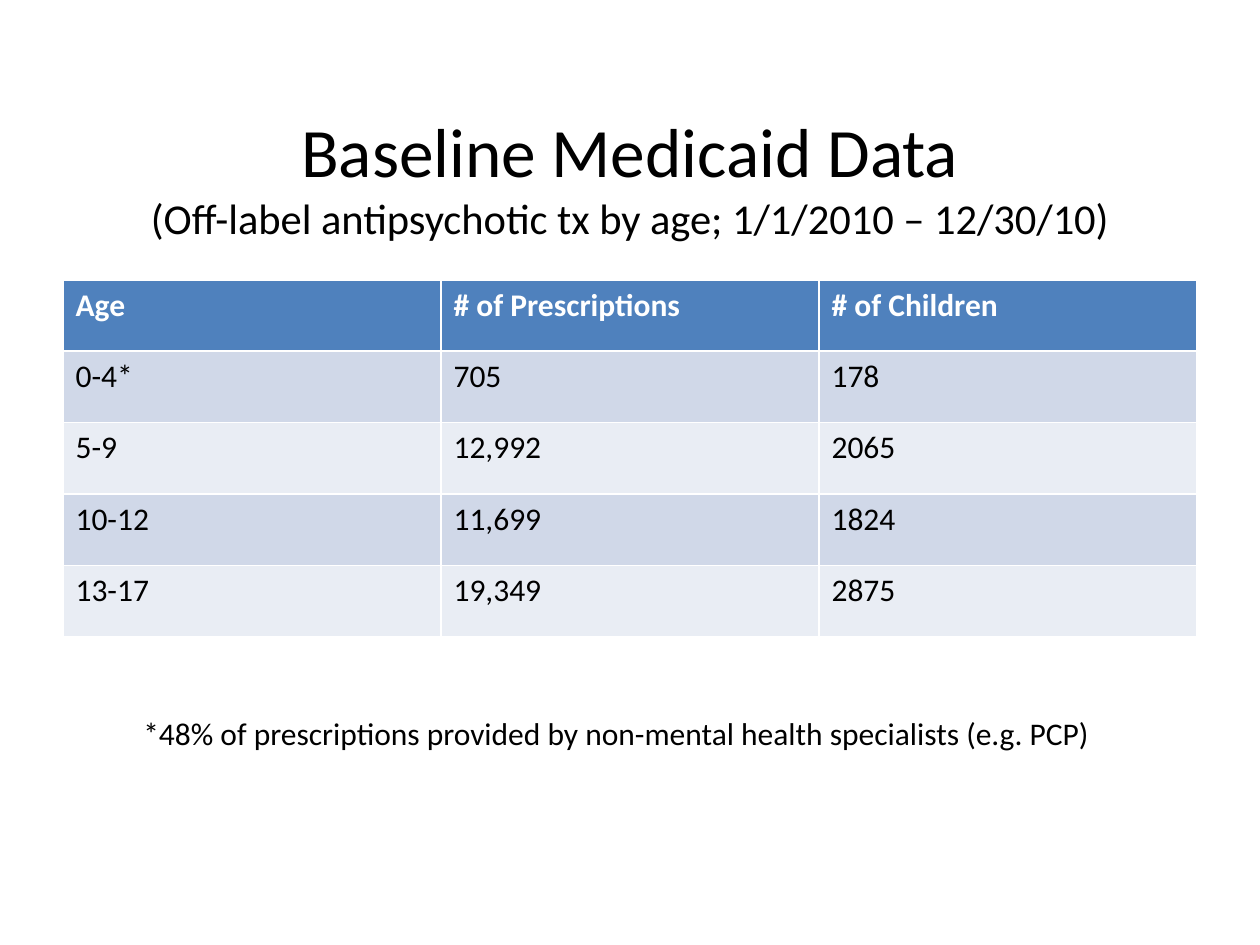
from pptx import Presentation
from pptx.dml.color import RGBColor
from pptx.enum.text import MSO_ANCHOR as Anchor, MSO_AUTO_SIZE as AutoSize, PP_ALIGN as Align
from pptx.util import Cm, Pt

BLACK, WHITE = "000000", "FFFFFF"
HEADER_FILL = "4F81BD"
BAND_FILLS = ("D0D8E8", "E9EDF4")
ROWS = [
    ("Age", "# of Prescriptions", "# of Children"),
    ("0-4*", "705", "178"),
    ("5-9", "12,992", "2065"),
    ("10-12", "11,699", "1824"),
    ("13-17", "19,349", "2875"),
]


def color(hex_value):
    return RGBColor.from_string(hex_value)


def set_format(target, values):
    for name, value in values.items():
        setattr(target, name, value)


def add_span(para, text, size, hex_value=BLACK, bold=False):
    span = para.add_run()
    span.text = text
    set_format(span.font, {"name": "Calibri", "size": Pt(size), "bold": bold})
    span.font.color.rgb = color(hex_value)


def fill_title(slide):
    title = slide.shapes.title
    set_format(title, {"left": Cm(1.27), "top": Cm(2.46),
                       "width": Cm(22.86), "height": Cm(3.18)})
    # The deeper bottom margin lifts the two lines within the box
    set_format(title.text_frame, {"word_wrap": True, "auto_size": AutoSize.NONE,
                                  "vertical_anchor": Anchor.MIDDLE,
                                  "margin_bottom": Cm(1.15)})
    para = title.text_frame.paragraphs[0]
    para.alignment = Align.CENTER
    add_span(para, "Baseline Medicaid Data", 39.6)
    para.add_line_break()
    add_span(para, "(Off-label antipsychotic tx by age; 1/1/2010 – 12/30/10)", 24.3)


def add_data_table(slide):
    table = slide.shapes.add_table(len(ROWS), len(ROWS[0]), Cm(1.27), Cm(5.64),
                                   Cm(22.86), Cm(7.2)).table
    for row_index, values in enumerate(ROWS):
        header = row_index == 0
        fill = HEADER_FILL if header else BAND_FILLS[(row_index - 1) % 2]
        for column_index, text in enumerate(values):
            cell = table.cell(row_index, column_index)
            cell.fill.solid()
            cell.fill.fore_color.rgb = color(fill)
            add_span(cell.text_frame.paragraphs[0], text, 18,
                     WHITE if header else BLACK, header)


def add_footnote(slide):
    box = slide.shapes.add_textbox(Cm(2.64), Cm(14.27), Cm(19.81), Cm(1.02))
    set_format(box.text_frame, {"word_wrap": False,
                                "auto_size": AutoSize.SHAPE_TO_FIT_TEXT})
    add_span(box.text_frame.paragraphs[0],
             "*48% of prescriptions provided by non-mental health specialists (e.g. PCP)", 18)


def main():
    deck = Presentation()
    set_format(deck, {"slide_width": Cm(25.4), "slide_height": Cm(19.05)})
    slide = deck.slides.add_slide(deck.slide_layouts.get_by_name("Title Only"))
    fill_title(slide)
    add_data_table(slide)
    add_footnote(slide)
    deck.save("out.pptx")


if __name__ == "__main__":
    main()
